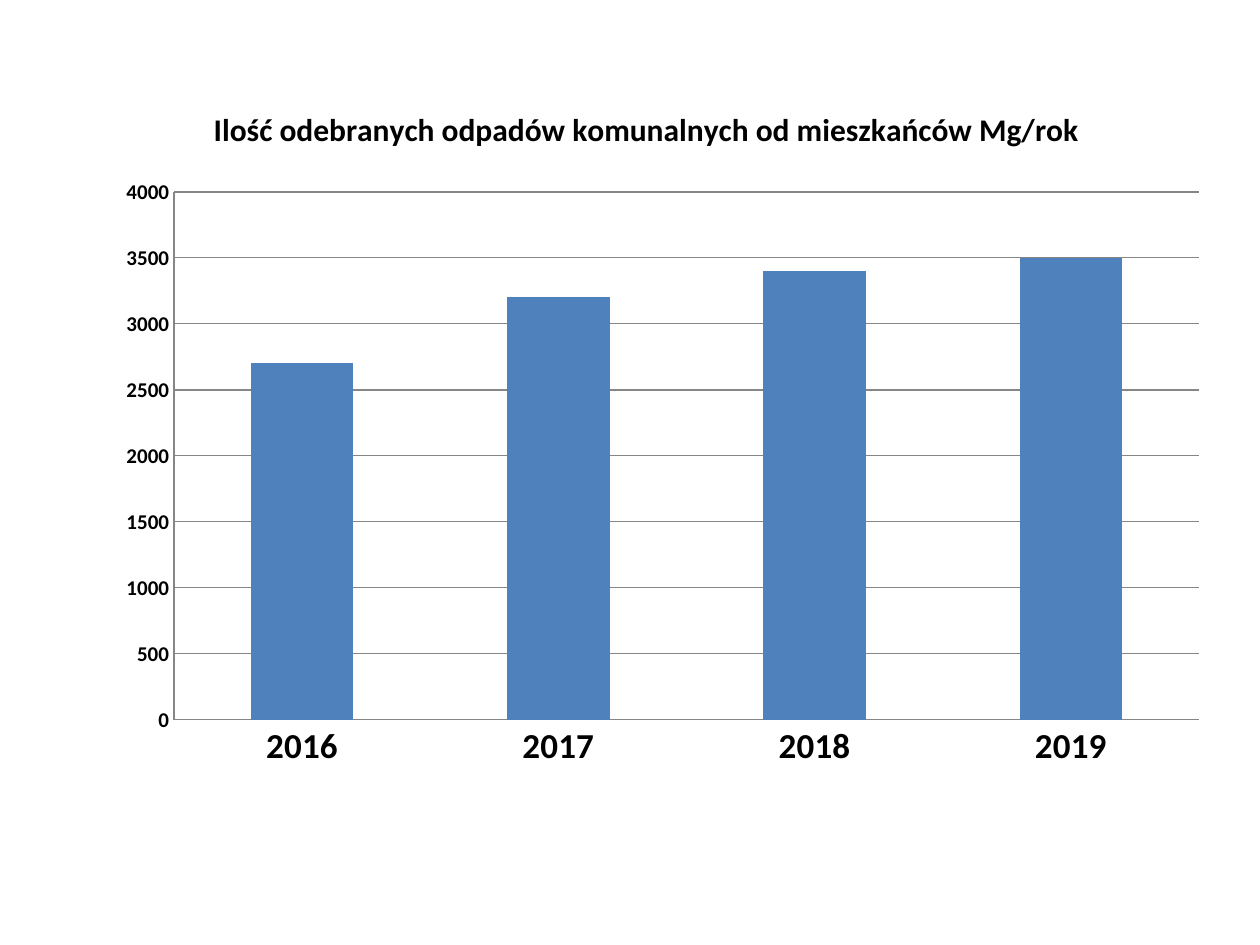
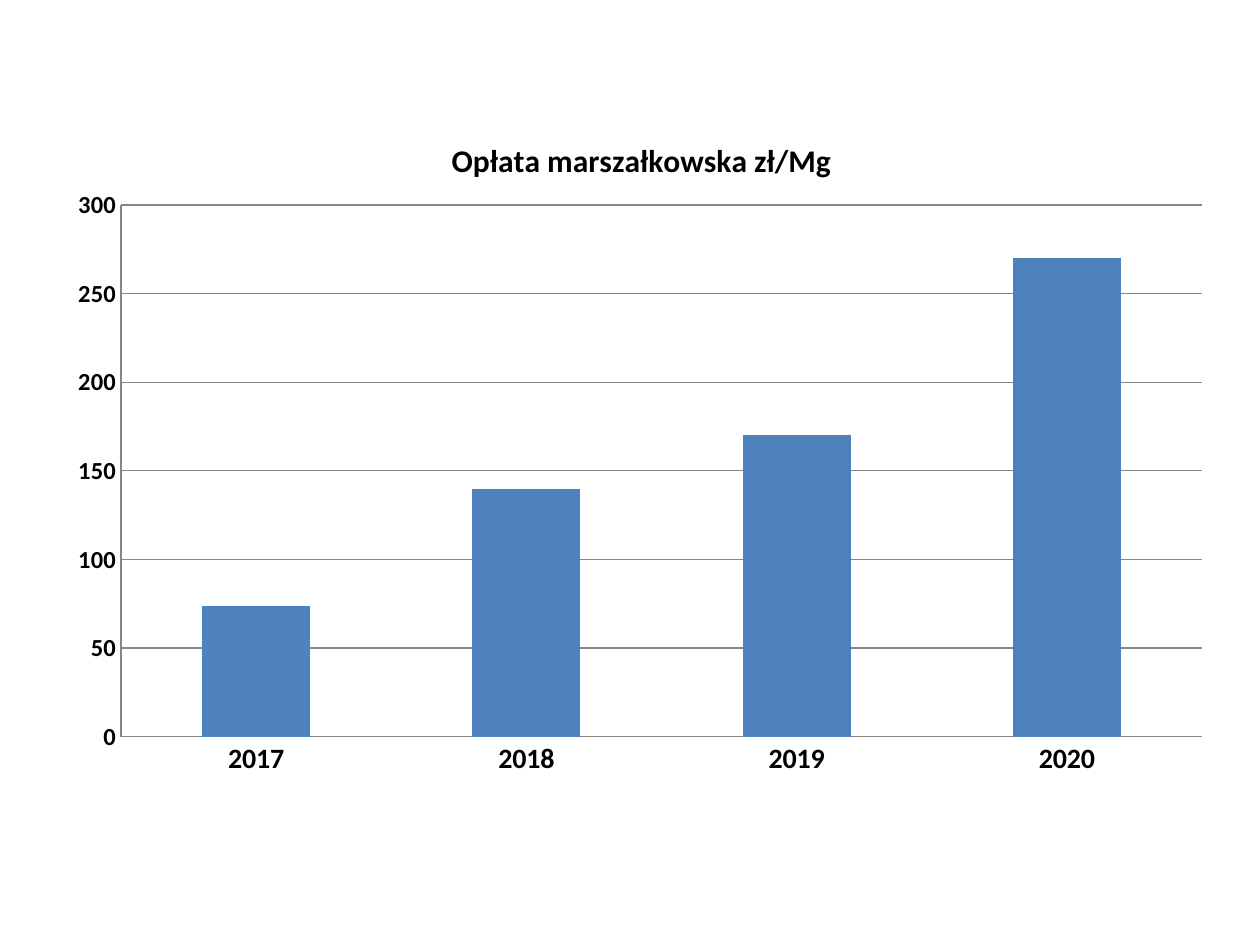
import dataclasses

import lxml.etree
import pptx
import pptx.chart.data
import pptx.dml.color
import pptx.enum.chart
import pptx.oxml.ns
import pptx.util

PX = pptx.util.Inches(1) // 126
BLANK_LAYOUT = 6


@dataclasses.dataclass(frozen=True)
class Theme:
    font: str = "Calibri"
    text: str = "000000"
    bar: str = "4F81BD"
    line: str = "868686"
    base_size: int = 10
    title_size: int = 18
    line_width: float = 0.75
    gap_width: int = 150


@dataclasses.dataclass(frozen=True)
class Box:
    left: int
    top: int
    width: int
    height: int


@dataclasses.dataclass(frozen=True)
class YearChart:
    """One chart; plot and title positions are measured from its box."""
    title: str
    values: dict
    box: Box
    plot: Box
    title_at: tuple
    year_size: int
    value_size: int
    value_top: int
    value_step: int


THEME = Theme()

CHARTS = [
    YearChart(
        title="Ilość odebranych odpadów komunalnych od mieszkańców Mg/rok",
        values={"2016": 2700, "2017": 3200, "2018": 3400, "2019": 3500},
        box=Box(105, 96, 1118, 687), plot=Box(69, 96, 1025, 528),
        title_at=(103, 6), year_size=20, value_size=12,
        value_top=4000, value_step=500,
    ),
    YearChart(
        title="Opłata marszałkowska zł/Mg",
        values={"2017": 74, "2018": 140, "2019": 170, "2020": 270},
        box=Box(54, 106, 1171, 684), plot=Box(67, 99, 1081, 532),
        title_at=(392, 27), year_size=16, value_size=14,
        value_top=300, value_step=50,
    ),
]


def color(code):
    return pptx.dml.color.RGBColor.from_string(code)


def style_font(font, size, bold=True):
    font.name = THEME.font
    font.size = pptx.util.Pt(size)
    font.bold = bold
    font.color.rgb = color(THEME.text)


def style_line(line):
    line.color.rgb = color(THEME.line)
    line.width = pptx.util.Pt(THEME.line_width)


def set_layout(parent, index, settings):
    """Give a chart part a manual layout as its child number index."""
    qn = pptx.oxml.ns.qn
    for old in parent.findall(qn("c:layout")):
        parent.remove(old)
    layout = lxml.etree.Element(qn("c:layout"))
    manual = lxml.etree.SubElement(layout, qn("c:manualLayout"))
    for name, value in settings.items():
        lxml.etree.SubElement(manual, qn(f"c:{name}")).set("val", str(value))
    parent.insert(index, layout)


def place_plot(chart, content):
    box, plot = content.box, content.plot
    area = chart.element.find(".//" + pptx.oxml.ns.qn("c:plotArea"))
    set_layout(area, 0, {
        "layoutTarget": "inner", "xMode": "edge", "yMode": "edge",
        "x": plot.left / box.width, "y": plot.top / box.height,
        "w": plot.width / box.width, "h": plot.height / box.height,
    })


def add_title(chart, content):
    title = chart.chart_title
    title.text_frame.text = content.title
    for span in title.text_frame.paragraphs[0].runs:
        style_font(span.font, THEME.title_size)
    title.include_in_layout = False
    left, top = content.title_at
    set_layout(title.element, 1, {
        "xMode": "edge", "yMode": "edge",
        "x": left / content.box.width, "y": top / content.box.height,
    })


def style_axes(chart, content):
    years, amounts = chart.category_axis, chart.value_axis
    for axis, size in ((years, content.year_size), (amounts, content.value_size)):
        style_font(axis.tick_labels.font, size)
        style_line(axis.format.line)
        axis.major_tick_mark = pptx.enum.chart.XL_TICK_MARK.NONE
        axis.minor_tick_mark = pptx.enum.chart.XL_TICK_MARK.NONE
    amounts.minimum_scale = 0
    amounts.maximum_scale = content.value_top
    amounts.major_unit = content.value_step
    amounts.has_major_gridlines = True
    style_line(amounts.major_gridlines.format.line)


def style_bars(chart):
    bars = chart.plots[0]
    bars.gap_width = THEME.gap_width
    bars.vary_by_categories = False
    fill = bars.series[0].format.fill
    fill.solid()
    fill.fore_color.rgb = color(THEME.bar)


def add_chart_slide(deck, content):
    page = deck.slides.add_slide(deck.slide_layouts[BLANK_LAYOUT])
    data = pptx.chart.data.CategoryChartData()
    data.categories = list(content.values)
    data.add_series("Series 1", list(content.values.values()))
    box = content.box
    chart = page.shapes.add_chart(
        pptx.enum.chart.XL_CHART_TYPE.COLUMN_CLUSTERED,
        box.left * PX, box.top * PX, box.width * PX, box.height * PX, data,
    ).chart
    chart.has_legend = False
    style_font(chart.font, THEME.base_size, bold=False)
    add_title(chart, content)
    place_plot(chart, content)
    style_axes(chart, content)
    style_bars(chart)


def main():
    deck = pptx.Presentation()
    deck.slide_width = 1260 * PX
    deck.slide_height = 945 * PX
    for content in CHARTS:
        add_chart_slide(deck, content)
    deck.save("out.pptx")


if __name__ == "__main__":
    main()
